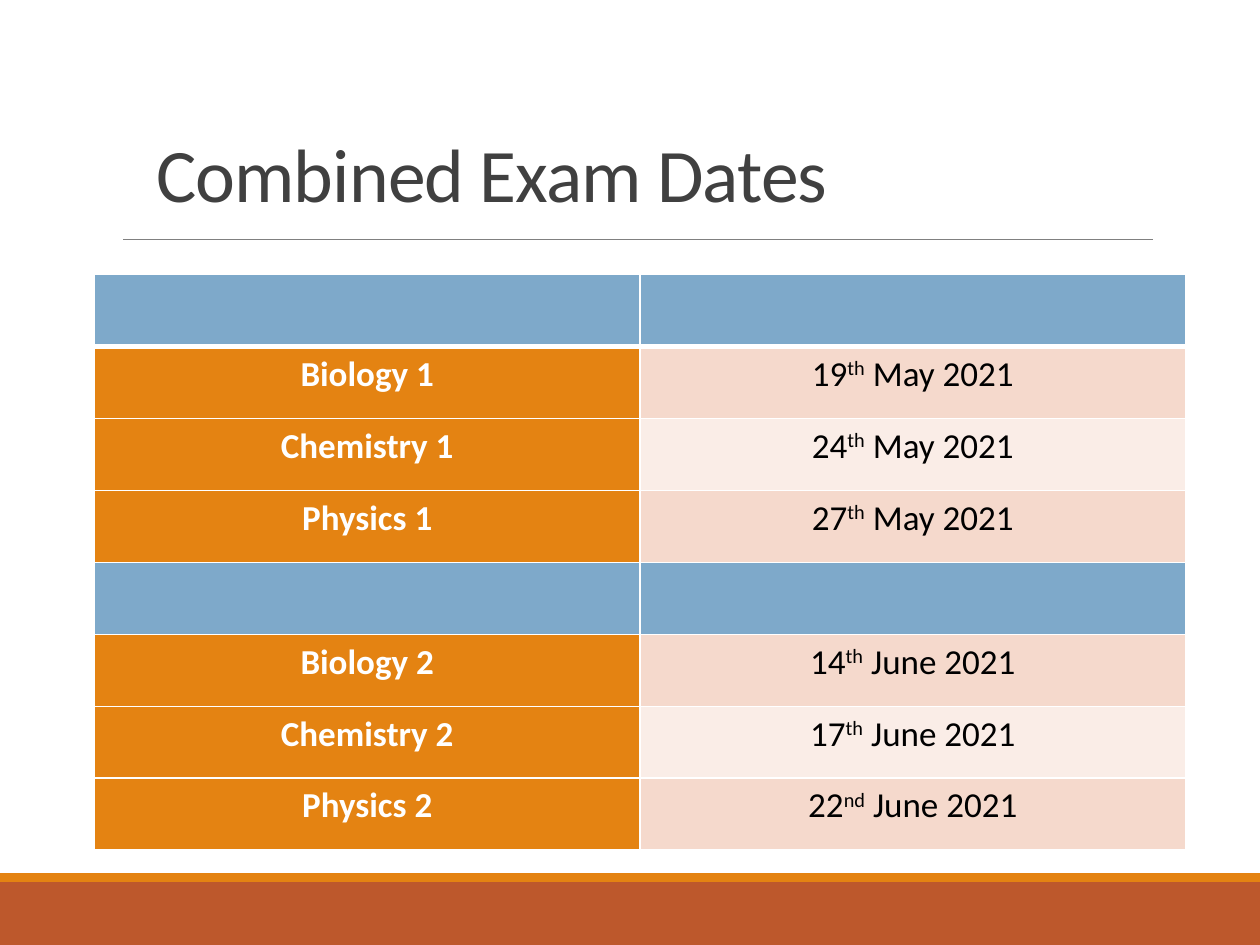
from lxml.etree import SubElement
from pptx import Presentation
from pptx.dml.color import RGBColor
from pptx.enum.shapes import MSO_CONNECTOR as Connector, MSO_SHAPE as Shape
from pptx.enum.text import MSO_ANCHOR as Anchor, PP_ALIGN as Align
from pptx.oxml.ns import qn
from pptx.util import Inches, Pt


def color(value):
    return RGBColor.from_string(value)


def add_text(paragraph, text, size=20, fill="000000", bold=False, **attributes):
    run = paragraph.add_run()
    run.text = text
    run.font.name = "Calibri"
    run.font.size = Pt(size)
    run.font.bold = bold
    run.font.color.rgb = color(fill)
    for name, value in attributes.items():
        run.font._element.set(name, str(value))


presentation = Presentation()
presentation.slide_width = Inches(10)
presentation.slide_height = Inches(7.5)
slide = presentation.slides.add_slide(presentation.slide_layouts[6])

for top, height, fill in [(7, 0.5, "BD582C"), (6.93, 0.07, "E48312")]:
    band = slide.shapes.add_shape(Shape.RECTANGLE, 0, Inches(top), Inches(10), Inches(height))
    band.shadow.inherit = False
    band.fill.solid()
    band.fill.fore_color.rgb = color(fill)
    band.line.fill.background()

rule = slide.shapes.add_connector(
    Connector.STRAIGHT, Inches(0.98), Inches(1.9), Inches(9.15), Inches(1.9))
rule.line.color.rgb = color("808080")
rule.line.width = Pt(0.5)
SubElement(rule._element.spPr, qn("a:effectLst"))

title = slide.shapes.add_textbox(Inches(1.14), Inches(1.12), Inches(7.68), Inches(0.66))
title.text_frame.word_wrap = True
title.text_frame.vertical_anchor = Anchor.BOTTOM
paragraph = title.text_frame.paragraphs[0]
paragraph.line_spacing = 0.85
add_text(paragraph, "Combined Exam Dates", size=43.2, fill="404040", spc=-50)

exams = [
    None,
    ("Biology 1", "19", "th", " May 2021"),
    ("Chemistry 1", "24", "th", " May 2021"),
    ("Physics 1", "27", "th", " May 2021"),
    None,
    ("Biology 2", "14", "th", " June 2021"),
    ("Chemistry 2", "17", "th", " June 2021"),
    ("Physics 2", "22", "nd", " June 2021"),
]
table = slide.shapes.add_table(
    len(exams), 2, Inches(0.75), Inches(2.18), Inches(8.66), Inches(4.57)).table

for index, exam in enumerate(exams):
    date_fill = "F5D9CC" if index % 2 else "FAEDE7"
    fills = ("E48312", date_fill) if exam else ("7EA9CA", "7EA9CA")
    for cell, fill in zip(table.rows[index].cells, fills):
        cell.margin_left = cell.margin_right = Inches(0.07)
        cell.margin_top = cell.margin_bottom = 0
        properties = cell._tc.get_or_add_tcPr()
        for side in ("lnL", "lnR", "lnT", "lnB"):
            heavy = (index, side) in [(0, "lnB"), (1, "lnT")]
            border = SubElement(properties, qn(f"a:{side}"), w=str(Pt(3 if heavy else 1)))
            SubElement(SubElement(border, qn("a:solidFill")), qn("a:srgbClr"), val="FFFFFF")
        cell.fill.solid()
        cell.fill.fore_color.rgb = color(fill)
    if exam:
        subject, day, suffix, month = exam
        subject_line, date_line = [cell.text_frame.paragraphs[0] for cell in table.rows[index].cells]
        for paragraph in (subject_line, date_line):
            paragraph.alignment = Align.CENTER
            paragraph.line_spacing = 1.15
        add_text(subject_line, subject, fill="FFFFFF", bold=True)
        add_text(date_line, day)
        add_text(date_line, suffix, baseline=30000)
        add_text(date_line, month)

presentation.save("out.pptx")
